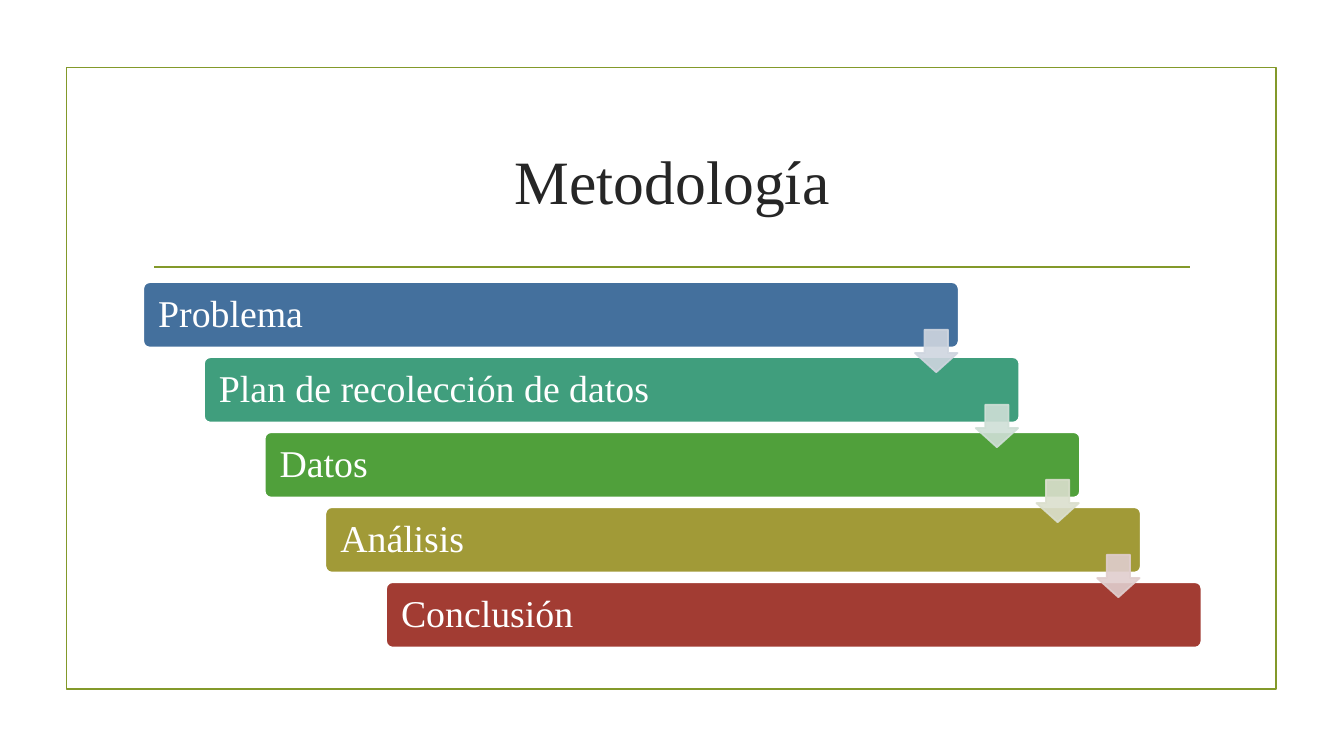
from dataclasses import dataclass

from lxml.etree import SubElement
from pptx import Presentation
from pptx.dml.color import RGBColor
from pptx.enum.shapes import MSO_CONNECTOR, MSO_SHAPE
from pptx.enum.text import MSO_ANCHOR, PP_ALIGN
from pptx.oxml.ns import qn
from pptx.util import Cm, Pt


@dataclass(frozen=True)
class Theme:
    font: str = "Times New Roman"
    title_size: float = 44
    step_size: float = 27
    line_width: float = 1.25
    accent: str = "83992A"
    title: str = "262626"
    white: str = "FFFFFF"
    bars: tuple = ("44709D", "409E7D", "50A03B", "A19A37", "A23C33")
    arrows: tuple = ("CFD5DF", "CFDFD6", "DBDFCE", "E0CECE")


THEME = Theme()
STEPS = ("Problema", "Plan de recolección de datos", "Datos", "Análisis", "Conclusión")
STEP_X, STEP_Y = 1.53, 1.89


def set_text(sp, text, *, size, color, align=PP_ALIGN.LEFT, spacing=1.0, inset=0.25):
    tf = sp.text_frame
    tf.word_wrap = True
    tf.vertical_anchor = MSO_ANCHOR.MIDDLE
    tf.margin_left = tf.margin_right = Cm(inset)
    tf.margin_top = tf.margin_bottom = Cm(0.13)
    p = tf.paragraphs[0]
    p.alignment = align
    p.line_spacing = spacing
    r = p.add_run()
    r.text = text
    r.font.name = THEME.font
    r.font.size = Pt(size)
    r.font.color.rgb = RGBColor.from_string(color)


def set_opacity(fill_format, percent):
    """Make a solid fill, of a shape or of its line, partly transparent."""
    color = fill_format._xPr.find(qn("a:solidFill"))[0]
    SubElement(color, qn("a:alpha"), val=str(percent * 1000))


def add_box(s, kind, x, y, w, h, *, line, fill=None, adjustments=(), opacity=100):
    sp = s.shapes.add_shape(kind, Cm(x), Cm(y), Cm(w), Cm(h))
    sp.shadow.inherit = False
    for i, value in enumerate(adjustments):
        sp.adjustments[i] = value
    sp.line.color.rgb = RGBColor.from_string(line)
    sp.line.width = Pt(THEME.line_width)
    if fill:
        sp.fill.solid()
        sp.fill.fore_color.rgb = RGBColor.from_string(fill)
    else:
        sp.fill.background()
    if opacity < 100:
        set_opacity(sp.fill, opacity)
        set_opacity(sp.line.fill, opacity)
    return sp


def add_rule(s, x1, x2, y):
    line = s.shapes.add_connector(MSO_CONNECTOR.STRAIGHT, Cm(x1), Cm(y), Cm(x2), Cm(y))
    line.line.color.rgb = RGBColor.from_string(THEME.accent)
    line.line.width = Pt(THEME.line_width)
    SubElement(line._element.spPr, qn("a:effectLst"))


def add_title(s, text):
    sp = s.shapes.add_textbox(Cm(3.61), Cm(2.72), Cm(26.67), Cm(3.63))
    set_text(sp, text, size=THEME.title_size, color=THEME.title, align=PP_ALIGN.CENTER)


def add_staircase(s):
    """Draw the descending bars, then the arrows that lead from each to the next."""
    for i, (text, color) in enumerate(zip(STEPS, THEME.bars)):
        sp = add_box(s, MSO_SHAPE.ROUNDED_RECTANGLE, 3.61 + i * STEP_X, 7.11 + i * STEP_Y,
                     20.55, 1.65, line=THEME.white, fill=color, adjustments=(0.1,))
        set_text(sp, text, size=THEME.step_size, color=THEME.white, spacing=0.9, inset=0.33)
    for i, color in enumerate(THEME.arrows):
        add_box(s, MSO_SHAPE.DOWN_ARROW, 23.06 + i * STEP_X, 8.31 + i * STEP_Y, 1.07, 1.07,
                line=color, fill=color, adjustments=(0.55, 0.45), opacity=90)


def main():
    prs = Presentation()
    prs.slide_width, prs.slide_height = Cm(33.87), Cm(19.05)
    s = prs.slides.add_slide(prs.slide_layouts[6])
    add_box(s, MSO_SHAPE.RECTANGLE, 1.68, 1.7, 30.48, 15.67, line=THEME.accent)
    add_rule(s, 3.89, 30, 6.73)
    add_title(s, "Metodología")
    add_staircase(s)
    prs.save("out.pptx")


if __name__ == "__main__":
    main()
